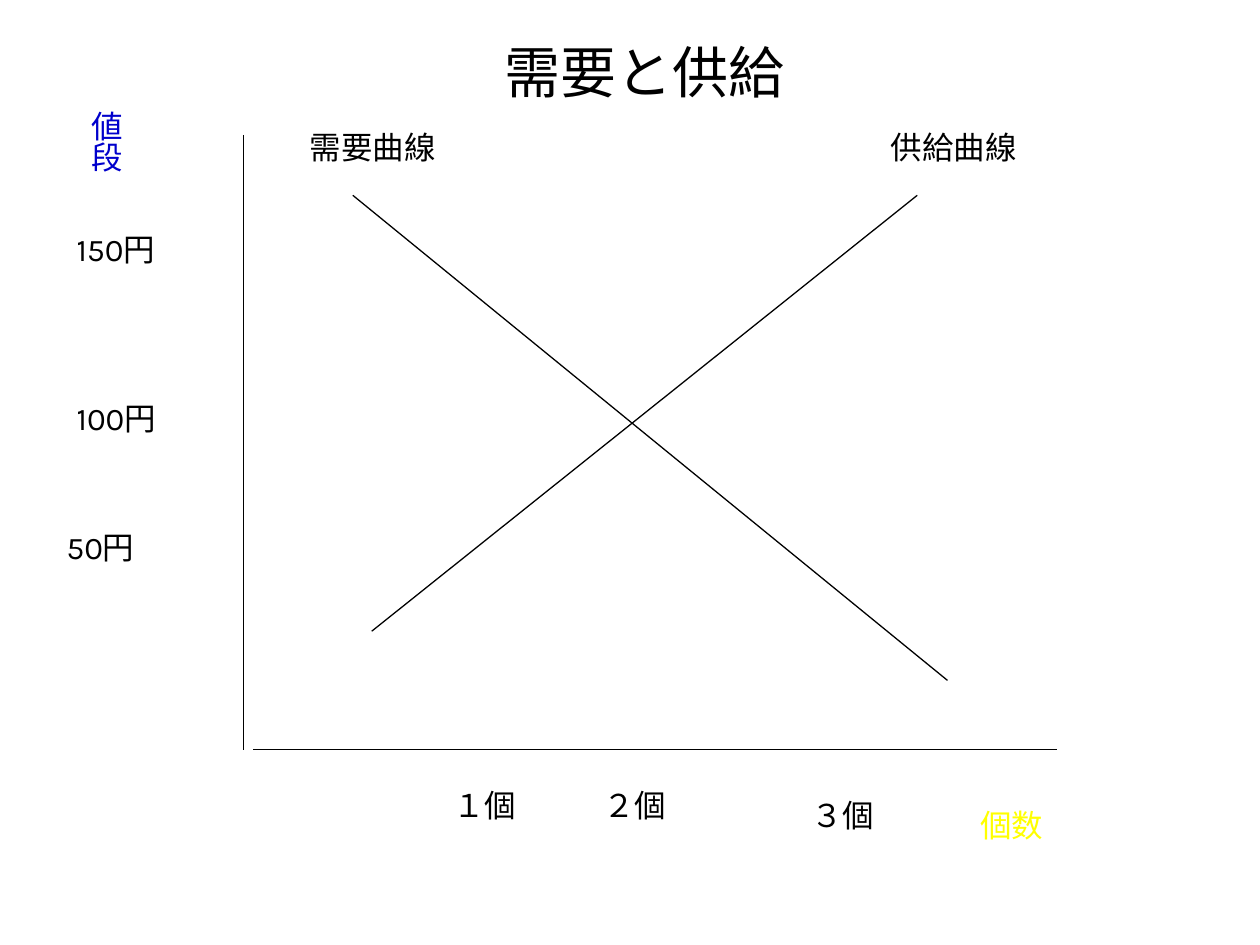
import pptx
import pptx.util
import pptx.dml.color
import pptx.enum.shapes
import pptx.enum.text
import pptx.oxml.ns
import lxml.etree

THEME = {
    "font": "Karla",
    "ink": "000000",
    "price": "0000CC",
    "count": "FFFF00",
    "title": 32,
    "label": 18,
    "line": 0.75,
}

COLS, ROWS = 100, 75
LINE_H = 4

TITLE = ("需要と供給", 35, 2.5, 32.3, 6.4)

AXES = [
    (19.3, 10.7, 19.3, 59.5),
    (20.1, 59.5, 83.9, 59.5),
]
CURVES = [
    (29.5, 50.1, 72.8, 15.5),
    (28, 15.5, 75.2, 54),
]

PRICES = [
    ("150円", 5.1, 17.8, 11.8),
    ("100円", 5.1, 31.2, 11.8),
    ("50円", 4.3, 41.4, 13.4),
]
COUNTS = [
    ("１個", 35, 61.9, 10.2),
    ("２個", 46.9, 61.9, 11.8),
    ("３個", 63.4, 62.7, 10.2),
]
NAMES = [
    ("需要曲線", 23.6, 9.7, 27.6),
    ("供給曲線", 69.7, 9.7, 22.8),
]

deck = pptx.Presentation()
deck.slide_width = pptx.util.Inches(10)
deck.slide_height = pptx.util.Inches(7.5)
slide = deck.slides.add_slide(deck.slide_layouts[6])


def col(n):
    return round(deck.slide_width * n / COLS)


def row(n):
    return round(deck.slide_height * n / ROWS)


def tint(name):
    return pptx.dml.color.RGBColor.from_string(THEME[name])


def draw(x1, y1, x2, y2):
    kind = pptx.enum.shapes.MSO_CONNECTOR.STRAIGHT
    line = slide.shapes.add_connector(kind, col(x1), row(y1), col(x2), row(y2))
    line.line.color.rgb = tint("ink")
    line.line.width = pptx.util.Pt(THEME["line"])
    props = line._element.spPr
    lxml.etree.SubElement(props, pptx.oxml.ns.qn("a:effectLst"))


def write(text, x, y, w, h=LINE_H, size="label", color="ink"):
    box = slide.shapes.add_textbox(col(x), row(y), col(w), row(h))
    frame = box.text_frame
    frame.word_wrap = True
    frame.auto_size = pptx.enum.text.MSO_AUTO_SIZE.SHAPE_TO_FIT_TEXT
    run = frame.paragraphs[0].add_run()
    run.text = text
    run.font.name = THEME["font"]
    run.font.size = pptx.util.Pt(THEME[size])
    run.font.color.rgb = tint(color)
    return frame


for ends in AXES + CURVES:
    draw(*ends)

for label in PRICES + COUNTS + NAMES:
    write(*label)

write("個数", 76.8, 63.5, 17.3, color="count")
price = write("値段", 5.3, 7.8, 5.1, 7.9, color="price")
price._txBody.bodyPr.set("vert", "eaVert")

head = write(*TITLE, size="title")
head.paragraphs[0].alignment = pptx.enum.text.PP_ALIGN.CENTER

deck.save("out.pptx")
